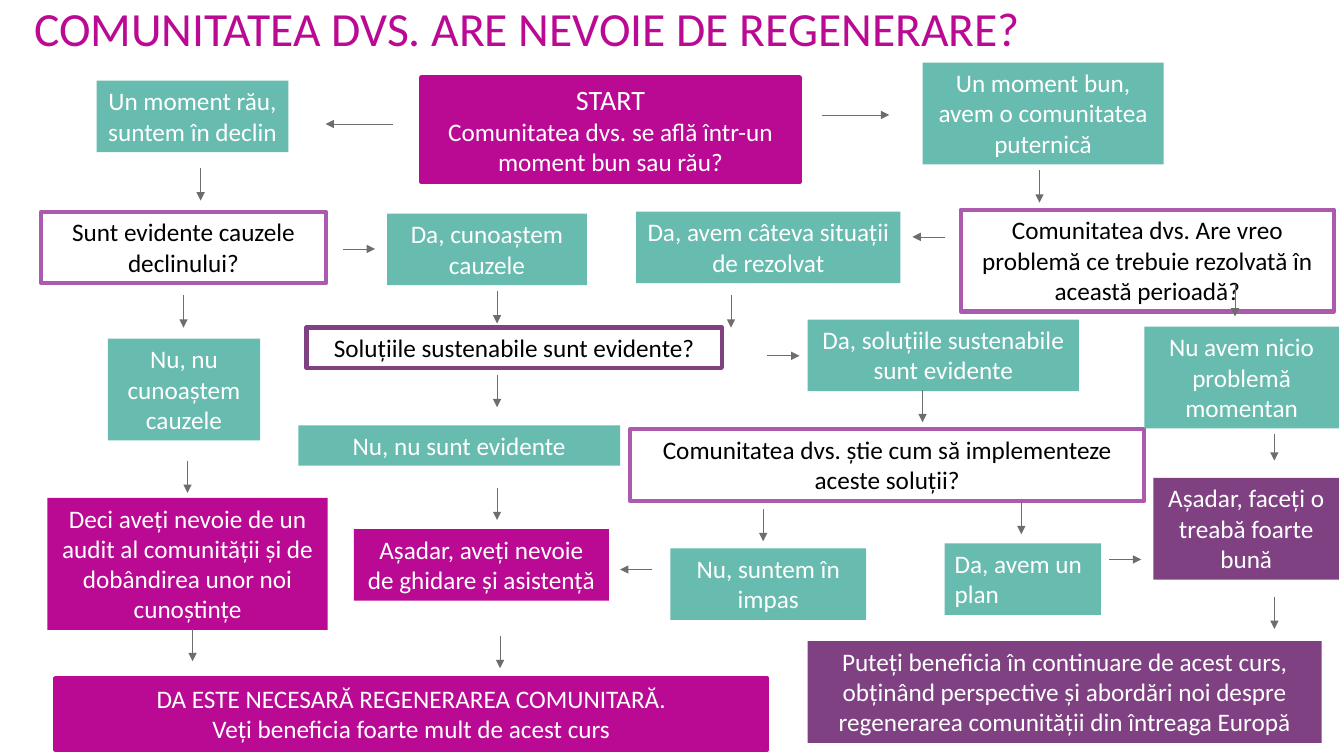
from dataclasses import dataclass
from typing import Optional

from lxml import etree
from pptx import Presentation
from pptx import util as u
from pptx.dml.color import RGBColor
from pptx.enum import shapes, text
from pptx.oxml.ns import qn

PX = 9144  # EMU per px, 100 px to the inch
FONT = "Calibri"
MAGENTA = RGBColor(0xBA, 0x0A, 0x94)
TEAL = RGBColor(0x68, 0xBB, 0xAF)
PURPLE = RGBColor(0x7F, 0x41, 0x82)
LILAC = RGBColor(0xAB, 0x5A, 0xB0)
GREY = RGBColor(0x6D, 0x6E, 0x6C)
WHITE = RGBColor(0xFF, 0xFF, 0xFF)
BLACK = RGBColor(0, 0, 0)

CENTER, LEFT = text.PP_ALIGN.CENTER, text.PP_ALIGN.LEFT
DIRECTIONS = {"up": (0, -1), "down": (0, 1), "left": (-1, 0), "right": (1, 0)}


@dataclass
class Step:
    x: int
    y: int
    w: int
    h: int
    words: str
    fill: Optional[RGBColor] = TEAL
    outline: Optional[RGBColor] = None
    align: text.PP_ALIGN = CENTER
    first_size: int = 18


@dataclass
class Arrow:
    x: int
    y: int
    heading: str = "down"
    length: int = 32


STEPS = [
    # Start and the two opening answers
    Step(418, 77, 375, 104, "START\nComunitatea dvs. se află într-un moment bun sau rău?",
         MAGENTA, MAGENTA, first_size=20),
    Step(96, 80, 190, 71, "Un moment rău, suntem în declin"),
    Step(915, 62, 239, 101, "Un moment bun, avem o comunitatea puternică"),
    # Questions
    Step(41, 210, 282, 71, "Sunt evidente cauzele declinului?", None, LILAC),
    Step(953, 208, 370, 101,
         "Comunitatea dvs. Are vreo problemă ce trebuie rezolvată în această perioadă?",
         None, LILAC),
    Step(304, 325, 412, 40, "Soluțiile sustenabile sunt evidente?", None, PURPLE),
    Step(625, 426, 510, 71, "Comunitatea dvs. știe cum să implementeze aceste soluții?",
         None, LILAC),
    # Answers
    Step(384, 212, 198, 71, "Da, cunoaștem cauzele"),
    Step(107, 336, 151, 101, "Nu, nu cunoaștem cauzele"),
    Step(631, 210, 262, 71, "Da, avem câteva situații de rezolvat"),
    Step(801, 317, 269, 71, "Da, soluțiile sustenabile sunt evidente"),
    Step(296, 422, 319, 40, "Nu, nu sunt evidente"),
    Step(1135, 324, 193, 101, "Nu avem nicio problemă momentan"),
    Step(937, 539, 155, 71, "Da, avem un plan", align=LEFT),
    Step(665, 544, 194, 71, "Nu, suntem în impas"),
    # Conclusions
    Step(47, 494, 278, 131,
         "Deci aveți nevoie de un audit al comunității și de dobândirea unor noi cunoștințe",
         MAGENTA),
    Step(351, 525, 253, 71, "Așadar, aveți nevoie de ghidare și asistență", MAGENTA),
    Step(1144, 474, 184, 101, "Așadar, faceți o treabă foarte bună", PURPLE),
    Step(55, 673, 706, 71,
         "DA ESTE NECESARĂ REGENERAREA COMUNITARĂ.\nVeți beneficia foarte mult de acest curs",
         MAGENTA, MAGENTA),
    Step(801, 636, 510, 101,
         "Puteți beneficia în continuare de acest curs, obținând perspective și abordări noi "
         "despre regenerarea comunității din întreaga Europă", PURPLE),
]

ARROWS = [
    # From the start
    Arrow(390, 123, "left", 67), Arrow(815, 114, "right", 67),
    # Decline branch
    Arrow(199, 167), Arrow(340, 247, "right"), Arrow(182, 293),
    Arrow(186, 457), Arrow(191, 624),
    # Solutions branch
    Arrow(493, 289), Arrow(493, 372), Arrow(493, 484), Arrow(496, 631),
    Arrow(725, 293), Arrow(761, 353, "right"),
    # Strong community branch
    Arrow(1031, 169), Arrow(937, 235, "left"), Arrow(1225, 282),
    Arrow(1264, 431, length=26), Arrow(1264, 592),
    # Implementation branch
    Arrow(915, 387), Arrow(1013, 498), Arrow(1100, 555, "right"),
    Arrow(757, 505), Arrow(647, 565, "left"),
]


def px(*lengths: int) -> list[u.Emu]:
    return [u.Emu(length * PX) for length in lengths]


def write(frame, words: str, *, color: RGBColor, size: int = 18, first_size: int = 18,
          align: text.PP_ALIGN = CENTER, spacing: Optional[float] = None) -> None:
    frame.word_wrap = True
    frame.vertical_anchor = text.MSO_ANCHOR.TOP
    for number, line in enumerate(words.split("\n")):
        paragraph = frame.add_paragraph() if number else frame.paragraphs[0]
        paragraph.alignment = align
        if spacing:
            paragraph.line_spacing = spacing
        run = paragraph.add_run()
        run.text = line
        run.font.name = FONT
        run.font.size = u.Pt(size if number else first_size)
        run.font.color.rgb = color


def draw_step(slide, step: Step) -> None:
    box = slide.shapes.add_shape(shapes.MSO_SHAPE.RECTANGLE,
                                 *px(step.x, step.y, step.w, step.h))
    box.shadow.inherit = False
    if step.fill is None:
        box.fill.background()
    else:
        box.fill.solid()
        box.fill.fore_color.rgb = step.fill
    if step.outline is None:
        box.line.fill.background()
    else:
        box.line.color.rgb = step.outline
        box.line.width = u.Pt(3)
    write(box.text_frame, step.words, color=BLACK if step.fill is None else WHITE,
          first_size=step.first_size, align=step.align)
    box.text_frame.auto_size = text.MSO_AUTO_SIZE.SHAPE_TO_FIT_TEXT


def draw_arrow(slide, arrow: Arrow) -> None:
    dx, dy = DIRECTIONS[arrow.heading]
    link = slide.shapes.add_connector(
        shapes.MSO_CONNECTOR.STRAIGHT,
        *px(arrow.x, arrow.y, arrow.x + dx * arrow.length, arrow.y + dy * arrow.length))
    link.line.color.rgb = GREY
    link.line.width = u.Pt(0.5)
    etree.SubElement(link.line._get_or_add_ln(), qn("a:tailEnd"), type="triangle")
    etree.SubElement(link._element.spPr, qn("a:effectLst"))


def main() -> None:
    deck = Presentation()
    deck.slide_width, deck.slide_height = px(1333, 750)
    slide = deck.slides.add_slide(deck.slide_layouts[6])

    # Title
    title = slide.shapes.add_textbox(*px(24, 0, 1355, 76))
    write(title.text_frame, "COMUNITATEA DVS. ARE NEVOIE DE REGENERARE?",
          color=MAGENTA, first_size=34, align=LEFT, spacing=0.9)

    # Flowchart
    for step in STEPS:
        draw_step(slide, step)
    for arrow in ARROWS:
        draw_arrow(slide, arrow)

    deck.save("out.pptx")


if __name__ == "__main__":
    main()
